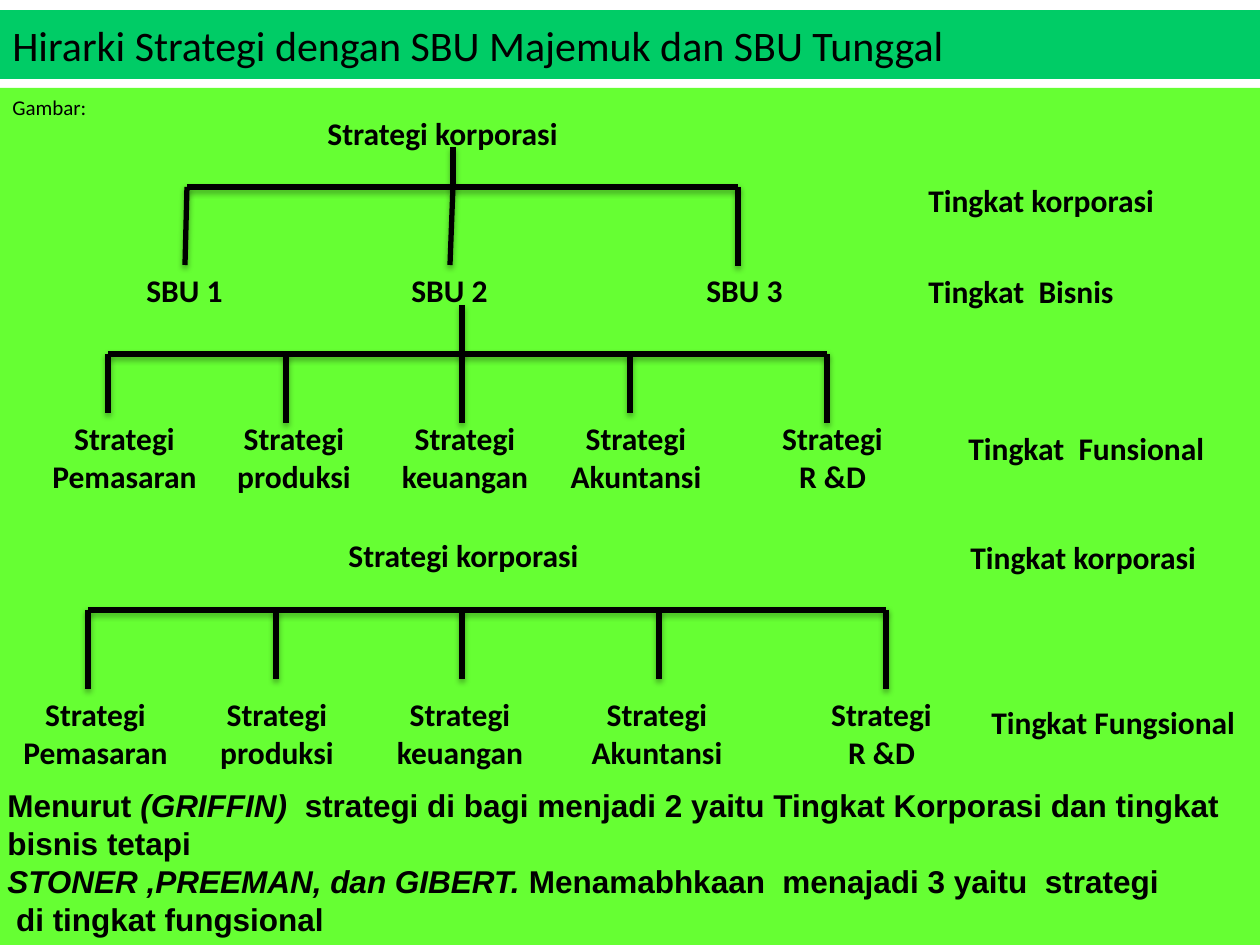
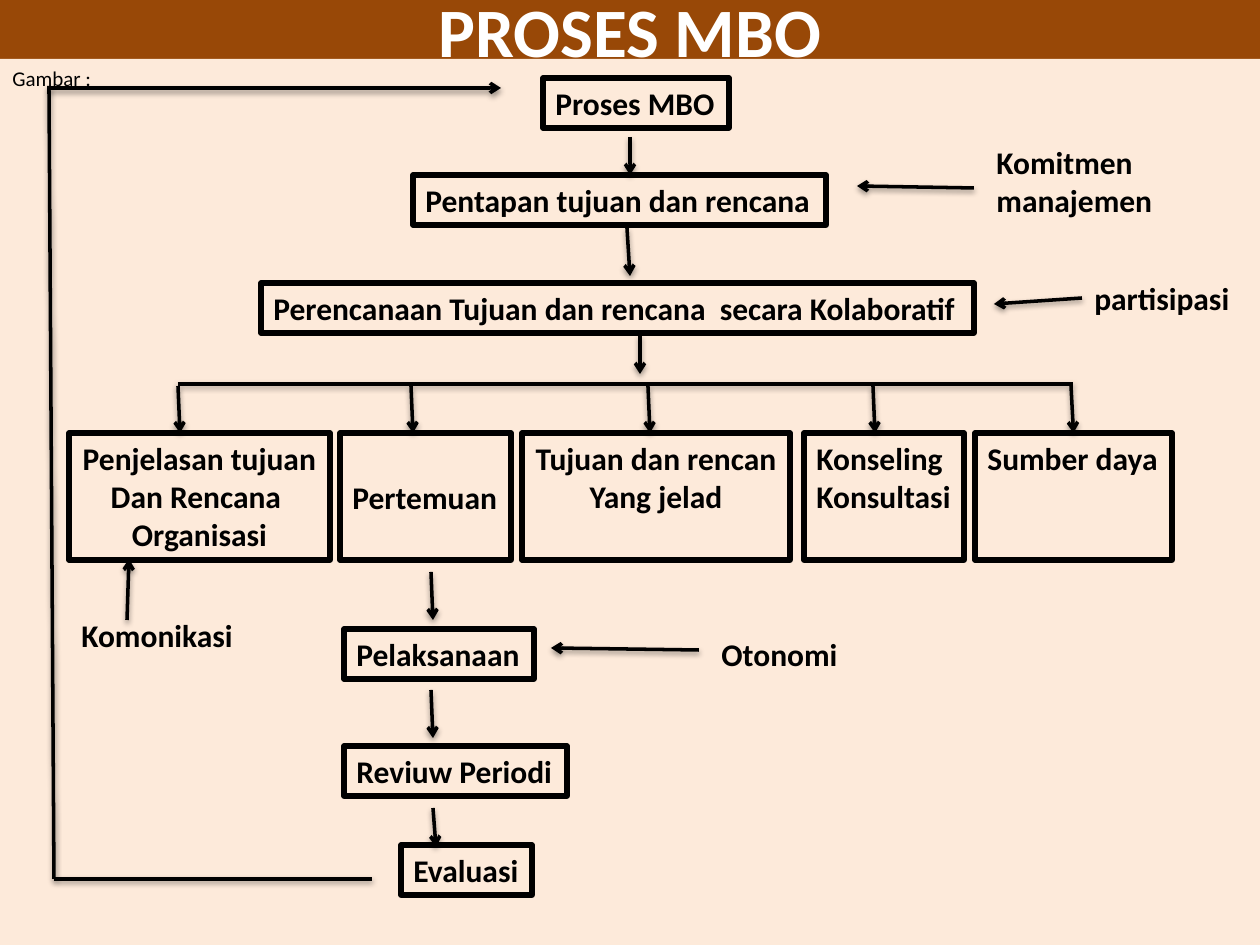
from lxml.etree import SubElement
from pptx import Presentation
from pptx.dml.color import RGBColor
from pptx.enum.shapes import MSO_CONNECTOR, MSO_SHAPE
from pptx.enum.text import MSO_ANCHOR, PP_ALIGN
from pptx.oxml.ns import qn
from pptx.util import Emu, Pt

PX = 914400 / 126
WIDTH, HEIGHT = 1260, 945
LINE_HEIGHT = 50
COLORS = {
    "ink": "000000", "white": "FFFFFF",
    "green": "00CC66", "lime": "66FF33",
    "brown": "984807", "peach": "FDEADA",
}
LEFT, CENTER = PP_ALIGN.LEFT, PP_ALIGN.CENTER


def px(length):
    return Emu(round(length * PX))


def rgb(name):
    return RGBColor.from_string(COLORS[name])


class Painter:
    def __init__(self, deck):
        self.deck = deck
        self.page = None
        self.line_width = 3
        self.shadow_style = 1

    def new_page(self, line_width, shadow_style):
        self.page = self.deck.slides.add_slide(self.deck.slide_layouts[6])
        self.line_width = line_width
        self.shadow_style = shadow_style

    def set_text(self, box, lines, size=18, bold=True, color="ink", font="Calibri",
                 align=LEFT, anchor=MSO_ANCHOR.TOP, wrap=False):
        """Each line is a string or a list of (text, italic) spans."""
        frame = box.text_frame
        frame.word_wrap = wrap
        frame.vertical_anchor = anchor
        for index, line in enumerate(lines):
            para = frame.paragraphs[0] if index == 0 else frame.add_paragraph()
            para.alignment = align
            para.font.name = font
            para.font.size = Pt(size)
            para.font.bold = bold
            para.font.color.rgb = rgb(color)
            for text, italic in [(line, False)] if isinstance(line, str) else line:
                span = para.add_run()
                span.text = text
                if italic:
                    span.font.italic = True

    def rectangle(self, left, top, width, height):
        box = self.page.shapes.add_shape(
            MSO_SHAPE.RECTANGLE, px(left), px(top), px(width), px(height))
        box.shadow.inherit = False
        return box

    def band(self, top, height, fill, text, **style):
        box = self.rectangle(0, top, WIDTH, height)
        box.fill.solid()
        box.fill.fore_color.rgb = rgb(fill)
        box.line.fill.background()
        self.set_text(box, [text], wrap=True, **style)

    def title(self, top, height, fill, text, **style):
        self.band(top, height, fill, text, anchor=MSO_ANCHOR.MIDDLE, **style)

    def body(self, top, fill, text):
        self.band(top, HEIGHT - top, fill, text, size=12, bold=False)

    def frame(self, left, top, width, lines, height=LINE_HEIGHT, **style):
        box = self.rectangle(left, top, width, height)
        box.fill.background()
        box.line.color.rgb = rgb("ink")
        box.line.width = Pt(3)
        self.set_text(box, lines, **style)
        return box

    def label(self, left, top, width, lines, height=LINE_HEIGHT, **style):
        box = self.page.shapes.add_textbox(px(left), px(top), px(width), px(height))
        self.set_text(box, lines, **style)
        return box

    def line(self, start, end, arrow=False, begin=None, finish=None):
        """begin and finish are (box, side) pairs to join."""
        link = self.page.shapes.add_connector(
            MSO_CONNECTOR.STRAIGHT, *map(px, (*start, *end)))
        if begin:
            link.begin_connect(*begin)
        if finish:
            link.end_connect(*finish)
        link.line.color.rgb = rgb("ink")
        link.line.width = Pt(self.line_width)
        effect = link._element.find(".//" + qn("a:effectRef"))
        effect.set("idx", str(self.shadow_style))
        if arrow:
            outline = link._element.find(".//" + qn("a:ln"))
            SubElement(outline, qn("a:tailEnd"), type="arrow")

    def comb(self, top, drops, joins=None):
        """A bar with a drop to each (x, bottom); joins maps x to (box, side)."""
        self.line((drops[0][0], top), (drops[-1][0], top))
        for x, bottom in drops:
            self.line((x, top), (x, bottom), finish=(joins or {}).get(x))


def hierarchy_page(paint):
    paint.new_page(line_width=3, shadow_style=2)
    paint.title(10, 69, "green", "Hirarki Strategi dengan SBU Majemuk dan SBU Tunggal",
                size=24, bold=False)
    paint.body(88, "lime", "Gambar:")

    # Headings and level names
    for left, top, width, text in [
        (315, 108, 257, "Strategi korporasi"),
        (336, 530, 257, "Strategi korporasi"),
        (916, 175, 253, "Tingkat korporasi"),
        (916, 266, 212, "Tingkat  Bisnis"),
        (956, 423, 263, "Tingkat  Funsional"),
        (958, 532, 253, "Tingkat korporasi"),
        (979, 697, 271, "Tingkat Fungsional"),
    ]:
        paint.label(left, top, width, [text])

    # Business units
    units = [paint.label(left, 265, 102, [f"SBU {number}"])
             for number, left in enumerate((134, 399, 694), 1)]

    # Functional strategies, once under each tree
    functions = [("Pemasaran", 171), ("produksi", 140), ("keuangan", 152),
                 ("Akuntansi", 158), ("R &D", 127)]
    for top, lefts in [(413, (39, 224, 389, 557, 769)),
                       (689, (10, 207, 384, 578, 818))]:
        for left, (name, width) in zip(lefts, functions):
            paint.label(left, top, width, ["Strategi", name], height=89, align=CENTER)

    # Trees
    paint.line((453, 147), (453, 187))
    paint.comb(187, [(187, 266), (453, 266), (738, 266)],
               {187: (units[0], 0), 453: (units[1], 0)})
    paint.line((462, 305), (462, 354))
    paint.comb(354, [(108, 413), (286, 423), (462, 423), (630, 413), (827, 423)])
    paint.comb(610, [(88, 689), (276, 679), (462, 679), (659, 679), (886, 689)])

    # Closing statement
    paint.label(-5, 780, 1259, [
        [("Menurut ", False), ("(GRIFFIN)", True),
         ("  strategi di bagi menjadi 2 yaitu Tingkat Korporasi dan tingkat", False)],
        "bisnis tetapi",
        [("STONER ,PREEMAN, dan GIBERT. ", True),
         ("Menamabhkaan  menajadi 3 yaitu  strategi", False)],
        " di tingkat fungsional",
    ], height=165, font="Arial")


def process_page(paint):
    paint.new_page(line_width=2, shadow_style=1)
    paint.title(0, 60, "brown", "PROSES MBO", size=39.6, color="white", align=CENTER)
    paint.body(59, "peach", "Gambar :")

    # Single steps
    for left, top, width, text in [
        (543, 78, 186, "Proses MBO"),
        (413, 175, 413, "Pentapan tujuan dan rencana"),
        (261, 283, 713, "Perencanaan Tujuan dan rencana  secara Kolaboratif"),
        (344, 629, 190, "Pelaksanaan"),
        (344, 746, 223, "Reviuw Periodi"),
        (401, 845, 131, "Evaluasi"),
    ]:
        paint.frame(left, top, width, [text])

    # Row of parallel activities
    row_top, row_height = 433, 127
    for left, width, lines, style in [
        (69, 261, ["Penjelasan tujuan", "Dan Rencana ", "Organisasi"], {"align": CENTER}),
        (340, 171, ["Pertemuan"], {"anchor": MSO_ANCHOR.MIDDLE}),
        (522, 268, ["Tujuan dan rencan", "Yang jelad"], {"align": CENTER}),
        (804, 160, ["Konseling", "Konsultasi"], {}),
        (975, 197, ["Sumber daya"], {}),
    ]:
        resources = paint.frame(left, row_top, width, lines, row_height, **style)

    # Supporting factors
    paint.label(69, 610, 178, ["Komonikasi"])
    paint.label(709, 629, 142, ["Otonomi"])
    paint.label(984, 137, 183, ["Komitmen", "manajemen"], height=89)
    participation = paint.label(1082, 273, 161, ["partisipasi"])

    # Arrows between steps and from the factors
    for start, end in [
        ((630, 137), (630, 175)), ((627, 228), (630, 276)), ((640, 335), (640, 374)),
        ((431, 572), (433, 620)), ((431, 690), (433, 738)), ((433, 808), (436, 847)),
        ((974, 188), (857, 186)), ((699, 650), (551, 648)), ((127, 620), (129, 559)),
    ]:
        paint.line(start, end, arrow=True)
    paint.line((1082, 300), (994, 304), arrow=True, begin=(participation, 1))

    # Branches to the row
    paint.line((178, 384), (1073, 384))
    for x in (178, 411, 648, 873):
        paint.line((x, 386), (x + 2, row_top), arrow=True)
    paint.line((1071, 386), (1073, row_top), arrow=True, finish=(resources, 0))

    # Feedback loop
    paint.line((372, 879), (54, 879))
    paint.line((54, 879), (49, 86))
    paint.line((49, 88), (501, 88), arrow=True)


def main():
    deck = Presentation()
    deck.slide_width, deck.slide_height = px(WIDTH), px(HEIGHT)
    paint = Painter(deck)
    hierarchy_page(paint)
    process_page(paint)
    deck.save("out.pptx")


if __name__ == "__main__":
    main()
